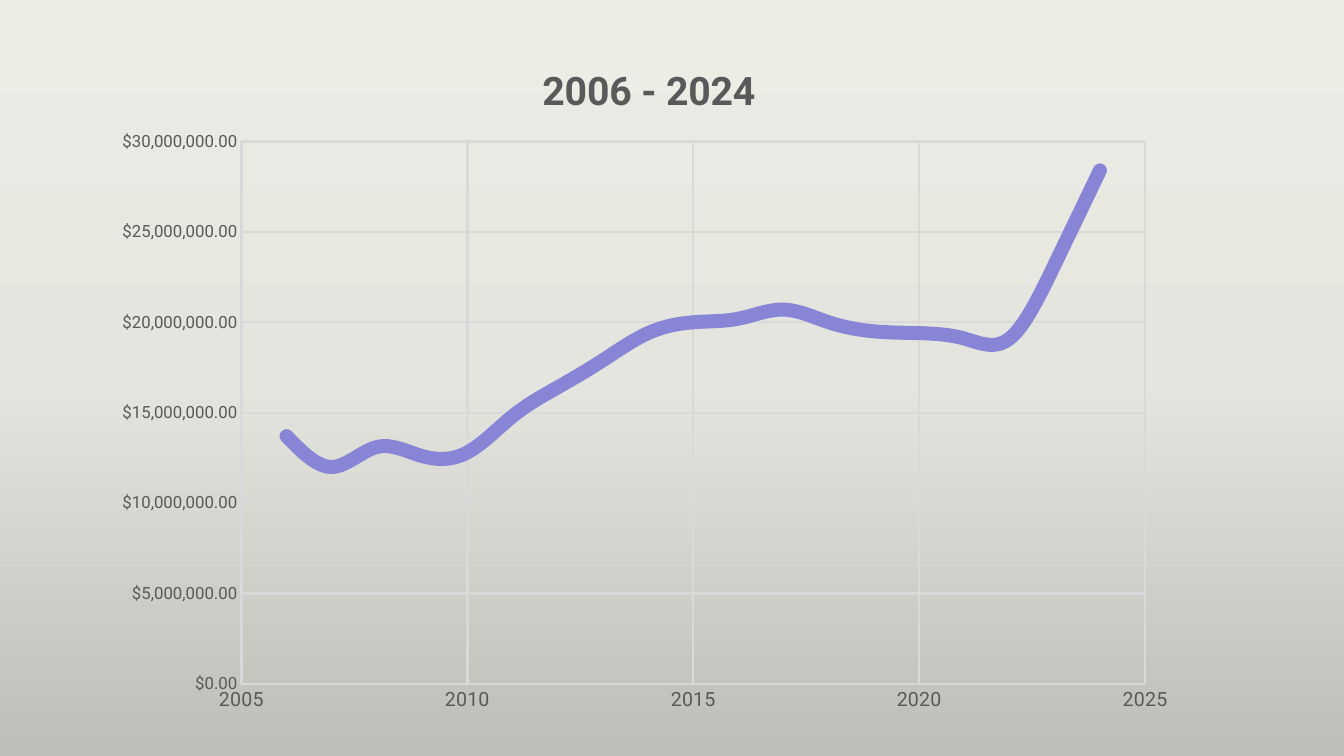
from copy import deepcopy

from lxml.etree import SubElement
from pptx import Presentation
from pptx.chart.data import XyChartData
from pptx.dml.color import RGBColor
from pptx.enum.chart import XL_CHART_TYPE, XL_TICK_MARK
from pptx.oxml.ns import qn
from pptx.util import Inches, Pt

FONT = "Roboto"
TEXT = RGBColor(0x59, 0x59, 0x59)
GRID = RGBColor(0xD9, 0xD9, 0xD9)
PURPLE = RGBColor(0x88, 0x85, 0xD7)
BACKDROP = [RGBColor(0xED, 0xED, 0xE6), RGBColor(0xE5, 0xE5, 0xDF), RGBColor(0xBE, 0xBE, 0xB8)]

FIRST_YEAR = 2006
MILLIONS = [13.7, 12.0, 13.1, 12.6, 12.8, 14.8, 16.4, 17.9, 19.4, 20.0,
            20.2, 20.7, 20.0, 19.5, 19.4, 19.1, 19.1, 23.2, 28.4]


class SlideBuilder:
    """Holds the style and the current slide and adds its elements."""

    def __init__(self, deck):
        self.page = deck.slides.add_slide(deck.slide_layouts[6])

    def backdrop(self, colors):
        fill = self.page.background.fill
        fill.gradient()
        fill.gradient_angle = 270
        stops = next(self.page.element.iter(qn("a:gsLst")))
        stops.insert(1, deepcopy(stops[0]))
        for index, (stop, color) in enumerate(zip(fill.gradient_stops, colors)):
            stop.position = index / (len(colors) - 1)
            stop.color.rgb = color

    def style_font(self, font, size, bold=False):
        font.name = FONT
        font.size = Pt(size)
        font.bold = bold
        font.color.rgb = TEXT

    def place(self, parent, index, **settings):
        for old in parent.findall(qn("c:layout")):
            parent.remove(old)
        layout = SubElement(parent, qn("c:layout"))
        parent.insert(index, layout)
        manual = SubElement(layout, qn("c:manualLayout"))
        for name, value in settings.items():
            SubElement(manual, qn(f"c:{name}")).set("val", str(value))

    def scatter(self, left, top, width, height, points):
        data = XyChartData()
        series_data = data.add_series("Series 1")
        for year, amount in points:
            series_data.add_data_point(year, amount)
        frame = self.page.shapes.add_chart(
            XL_CHART_TYPE.XY_SCATTER_SMOOTH_NO_MARKERS,
            Inches(left), Inches(top), Inches(width), Inches(height), data)
        chart = frame.chart
        chart.has_legend = False
        chart.font.name = FONT
        chart.font.size = Pt(10)
        chart.plots[0].vary_by_categories = False
        self.place(next(chart.element.iter(qn("c:plotArea"))), 0,
                   layoutTarget="inner", xMode="edge", yMode="edge",
                   x=0.13, y=0.16, w=0.83, h=0.78)
        return chart

    def curve(self, chart, color, width):
        line = chart.plots[0].series[0].format.line
        line.color.rgb = color
        line.width = Pt(width)
        series = next(chart.element.iter(qn("c:ser")))
        next(series.iter(qn("a:ln"))).set("cap", "rnd")
        for smooth in series.findall(qn("c:smooth")):
            smooth.set("val", "1")

    def chart_title(self, chart, text):
        chart.has_title = True
        title = chart.chart_title
        title.include_in_layout = False
        para = title.text_frame.paragraphs[0]
        para.text = text
        self.style_font(para.runs[0].font, 28, bold=True)
        self.place(next(chart.element.iter(qn("c:title"))), 1,
                   xMode="edge", yMode="edge", x=0.4, y=0.04)

    def axis(self, axis, low, high, step, size, grid_width, number_format):
        axis.minimum_scale = low
        axis.maximum_scale = high
        axis.major_unit = step
        axis.major_tick_mark = XL_TICK_MARK.NONE
        axis.minor_tick_mark = XL_TICK_MARK.NONE
        axis.has_major_gridlines = True
        grid = axis.major_gridlines.format.line
        grid.color.rgb = GRID
        grid.width = Pt(grid_width)
        labels = axis.tick_labels
        labels.number_format = number_format
        labels.number_format_is_linked = False
        self.style_font(labels.font, size)


def main():
    deck = Presentation()
    deck.slide_width = Inches(13.33)
    deck.slide_height = Inches(7.5)
    builder = SlideBuilder(deck)
    builder.backdrop(BACKDROP)

    points = [(FIRST_YEAR + index, round(amount * 1_000_000))
              for index, amount in enumerate(MILLIONS)]
    chart = builder.scatter(0.99, 0.3, 10.8, 6.9, points)
    builder.chart_title(chart, "2006 - 2024")
    builder.curve(chart, PURPLE, 10)

    years, dollars = chart.category_axis, chart.value_axis
    builder.axis(years, 2005, 2025, 5, 14, 1.75, "0")
    years.format.line.color.rgb = GRID
    years.format.line.width = Pt(1)
    builder.axis(dollars, 0, 30_000_000, 5_000_000, 12, 1.5, '"$"#,##0.00')
    dollars.format.line.fill.background()

    deck.save("out.pptx")


if __name__ == "__main__":
    main()
